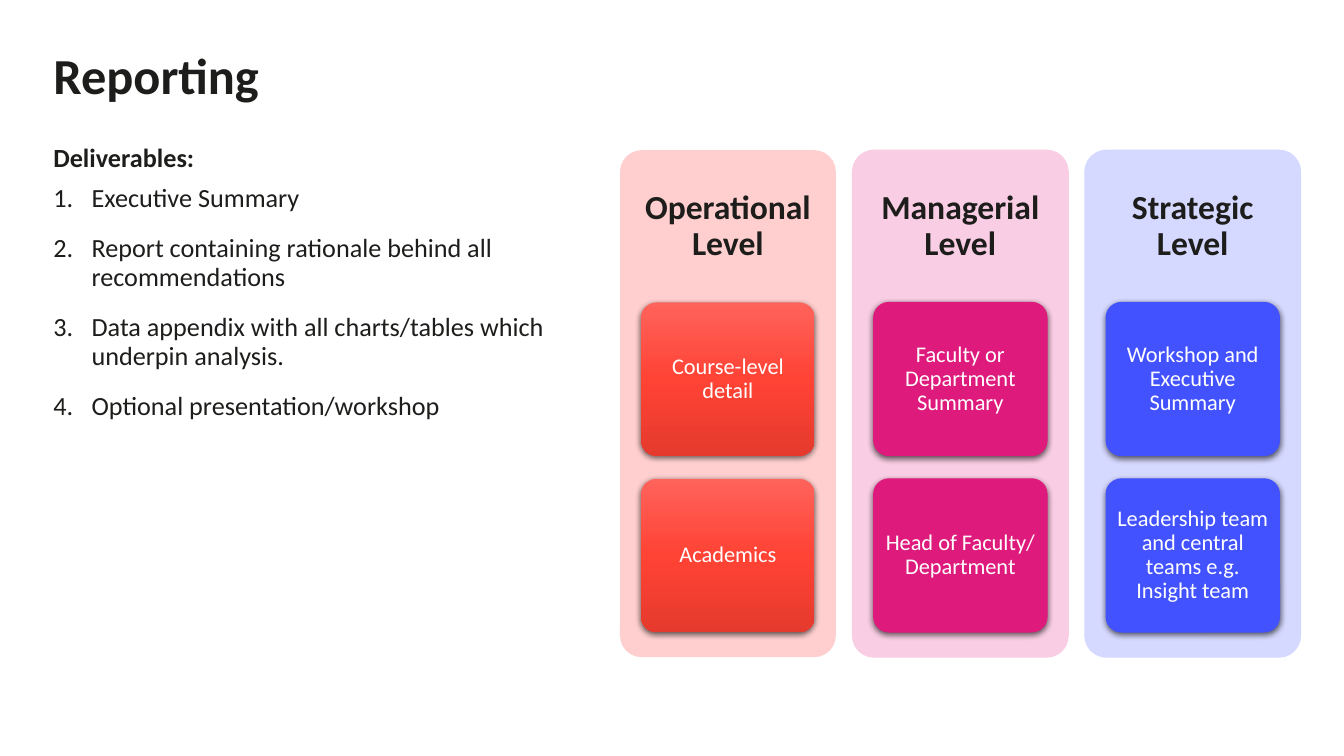
import copy

import pptx
import pptx.util
import pptx.dml.color
import pptx.enum.shapes
import pptx.enum.text
import pptx.oxml
import pptx.oxml.ns

Inches = pptx.util.Inches
Pt = pptx.util.Pt
RGBColor = pptx.dml.color.RGBColor
Align = pptx.enum.text.PP_ALIGN
Anchor = pptx.enum.text.MSO_ANCHOR
qn = pptx.oxml.ns.qn

INK = RGBColor(0x1D, 0x1D, 0x1B)
WHITE = RGBColor(0xFF, 0xFF, 0xFF)
BLUSH = RGBColor(0xFE, 0xCF, 0xCE)
ROSE = RGBColor(0xF9, 0xCD, 0xE3)
LILAC = RGBColor(0xD6, 0xD9, 0xFF)
REDS = (RGBColor(0xFF, 0x63, 0x5B), RGBColor(0xFF, 0x43, 0x35), RGBColor(0xE5, 0x3A, 0x2D))
PINK = RGBColor(0xDE, 0x1B, 0x7C)
BLUE = RGBColor(0x43, 0x52, 0xFF)
FONT = "Calibri"

TITLE = "Reporting"
HEAD = "Deliverables:"
ITEMS = [
    "Executive Summary",
    "Report containing rationale behind all recommendations",
    "Data appendix with all charts/tables which underpin analysis.",
    "Optional presentation/workshop",
]
# heading, panel colour, card colours, cards
LEVELS = [
    ("Operational Level", BLUSH, REDS, ["Course-level detail", "Academics"]),
    ("Managerial Level", ROSE, (PINK,),
     ["Faculty or Department Summary", "Head of Faculty/ Department"]),
    ("Strategic Level", LILAC, (BLUE,),
     ["Workshop and Executive Summary",
      "Leadership team and central teams e.g. Insight team"]),
]

LEFT, TOP, STEP = 6.15, 1.49, 2.305
PANEL_W, PANEL_H, HEAD_H = 2.14, 5.03, 1.51
CARD_W, CARD_H, CARD_STEP = 1.72, 1.52, 1.75

SHADOW = (
    '<a:outerShdw xmlns:a="http://schemas.openxmlformats.org/drawingml/2006/main"'
    ' blurRad="57150" dist="19050" dir="5400000" algn="ctr" rotWithShape="0">'
    '<a:srgbClr val="000000"><a:alpha val="63000"/></a:srgbClr></a:outerShdw>'
)


def style(para, size, color, bold=False, spacing=0.9):
    para.line_spacing = spacing
    font = para.font
    font.name, font.size, font.bold = FONT, Pt(size), bold
    font.color.rgb = color


def paint(shape, colors):
    """Fill with one colour and a matching line, or with a downward gradient."""
    fill = shape.fill
    if len(colors) == 1:
        fill.solid()
        fill.fore_color.rgb = colors[0]
        shape.line.color.rgb = colors[0]
        shape.line.width = Pt(0.75)
        return
    fill.gradient()
    fill.gradient_angle = 270
    stops = shape._element.spPr.find(".//" + qn("a:gsLst"))
    stops.append(copy.deepcopy(stops[-1]))
    for i, stop in enumerate(fill.gradient_stops):
        stop.color.rgb = colors[i]
        stop.position = i / (len(colors) - 1)
    shape.line.fill.background()


def block(slide, box, colors, text, size, color, bold=False, below=0.03):
    """Add a rounded block whose text is centred above the space kept below."""
    kind = pptx.enum.shapes.MSO_SHAPE.ROUNDED_RECTANGLE
    shape = slide.shapes.add_shape(kind, *map(Inches, box))
    shape.adjustments[0] = 0.1
    shape.shadow.inherit = False
    paint(shape, colors)
    frame = shape.text_frame
    frame.word_wrap = True
    frame.vertical_anchor = Anchor.MIDDLE
    frame.margin_left = frame.margin_right = Inches(0.04)
    frame.margin_top = Inches(0.03)
    frame.margin_bottom = Inches(below)
    para = frame.paragraphs[0]
    para.text = text
    para.alignment = Align.CENTER
    style(para, size, color, bold)
    return shape


def add_title(slide):
    title = slide.shapes.title
    title.left, title.top = Inches(0.43), Inches(0.48)
    title.width, title.height = Inches(12.48), Inches(0.63)
    frame = title.text_frame
    frame.text = TITLE
    frame.auto_size = pptx.enum.text.MSO_AUTO_SIZE.NONE
    frame.vertical_anchor = Anchor.MIDDLE
    para = frame.paragraphs[0]
    para.alignment = Align.LEFT
    style(para, 36, INK, True, 0.8)


def add_list(slide):
    box = slide.shapes.add_textbox(*map(Inches, (0.43, 1.39, 5.49, 5.13)))
    frame = box.text_frame
    frame.word_wrap = True
    head = frame.paragraphs[0]
    head.text = HEAD
    head.space_after = Pt(8)
    style(head, 18.7, INK, True)
    for item in ITEMS:
        para = frame.add_paragraph()
        para.text = item
        para.space_after = Pt(16)
        props = para._p.get_or_add_pPr()
        props.set("marL", str(Inches(0.38)))
        props.set("indent", str(-Inches(0.38)))
        mark = props.makeelement(qn("a:buAutoNum"), {"type": "arabicPeriod"})
        props.append(mark)
        style(para, 18.7, INK)


def add_levels(slide):
    for col, (head, tint, colors, cards) in enumerate(LEVELS):
        x = LEFT + col * STEP
        panel = block(slide, (x, TOP, PANEL_W, PANEL_H), (tint,), head, 24, INK,
                      True, PANEL_H - HEAD_H + 0.03)
        if tint == BLUSH:
            panel.line.fill.background()
        for row, text in enumerate(cards):
            y = TOP + HEAD_H + row * CARD_STEP
            box = (x + (PANEL_W - CARD_W) / 2, y, CARD_W, CARD_H)
            card = block(slide, box, colors, text, 16, WHITE)
            effects = card._element.spPr.find(qn("a:effectLst"))
            effects.append(pptx.oxml.parse_xml(SHADOW))


def main():
    deck = pptx.Presentation()
    deck.slide_width, deck.slide_height = Inches(13.33), Inches(7.5)
    slide = deck.slides.add_slide(deck.slide_layouts[5])
    add_title(slide)
    add_list(slide)
    add_levels(slide)
    deck.save("out.pptx")


if __name__ == "__main__":
    main()
